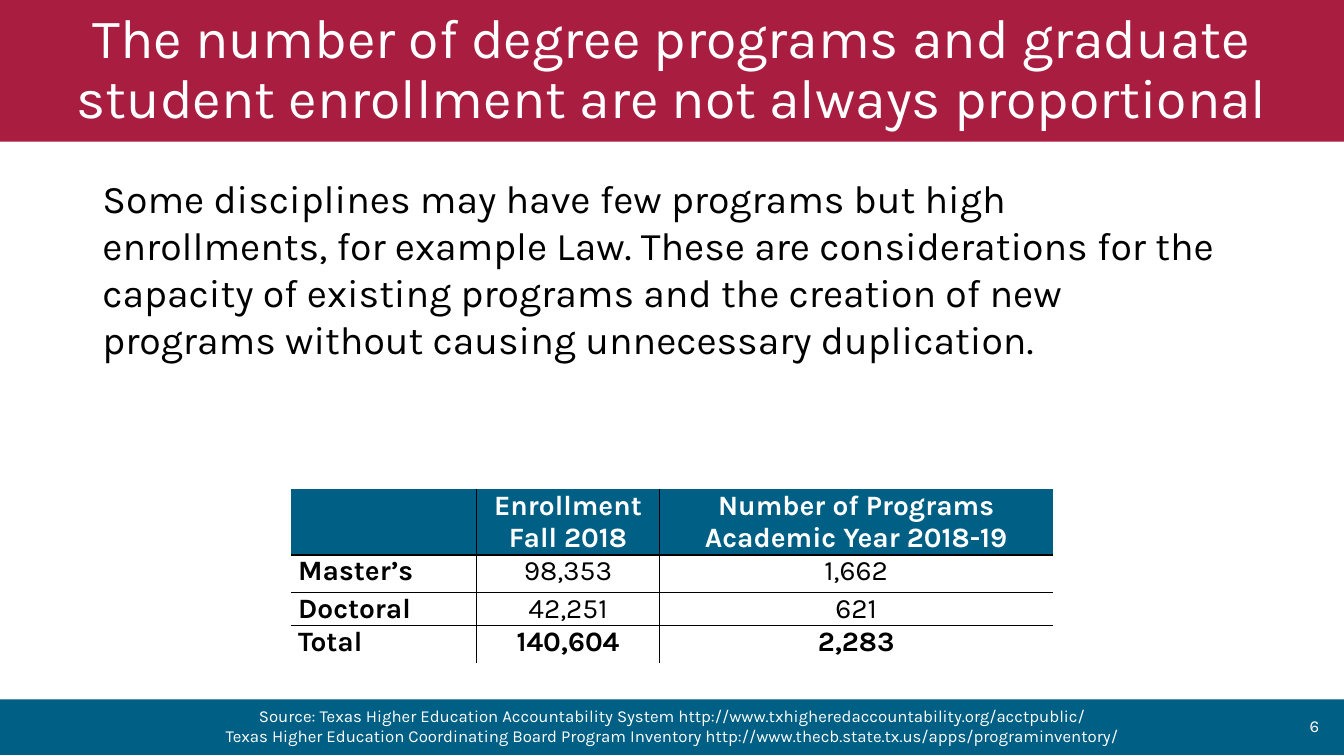
from dataclasses import dataclass

from lxml import etree
from pptx import Presentation
from pptx.dml.color import RGBColor
from pptx.enum.shapes import MSO_SHAPE
from pptx.enum.text import MSO_ANCHOR, MSO_AUTO_SIZE, PP_ALIGN
from pptx.oxml.ns import qn
from pptx.util import Pt

PX = 9525
RECT = MSO_SHAPE.RECTANGLE
TOP, MIDDLE = MSO_ANCHOR.TOP, MSO_ANCHOR.MIDDLE
LEFT, CENTER, RIGHT = PP_ALIGN.LEFT, PP_ALIGN.CENTER, PP_ALIGN.RIGHT
NO_FIT = MSO_AUTO_SIZE.NONE


@dataclass(frozen=True)
class Theme:
    """Colours, font and type sizes of the slide."""
    font: str = "Karla"
    crimson: str = "A81D40"
    teal: str = "005F84"
    white: str = "FFFFFF"
    black: str = "000000"
    title: float = 39.6
    body: int = 28
    table: int = 20
    small: int = 12


THEME = Theme()
TITLE = "The number of degree programs and graduate student enrollment are not always proportional"
BODY = ("Some disciplines may have few programs but high enrollments, for example Law. "
        "These are considerations for the capacity of existing programs and the creation "
        "of new programs without causing unnecessary duplication.")
SOURCES = [
    "Source: Texas Higher Education Accountability System "
    "http://www.txhigheredaccountability.org/acctpublic/",
    "Texas Higher Education Coordinating Board Program Inventory "
    "http://www.thecb.state.tx.us/apps/programinventory/",
]
PAGE = "6"
ROWS = [
    ["", "Enrollment\nFall 2018", "Number of Programs Academic Year 2018-19"],
    ["Master’s", "98,353", "1,662"],
    ["Doctoral", "42,251", "621"],
    ["Total", "140,604", "2,283"],
]
COL_WIDTHS = [177, 174, 375]
ROW_HEIGHTS = [62, 36, 31, 36]


def emu(box):
    """Turn pixel lengths into EMU."""
    return [v * PX for v in box]


def place(s, box):
    """Move a shape to a pixel box."""
    for name, value in zip(("left", "top", "width", "height"), emu(box)):
        setattr(s, name, value)


def write(tf, lines, size, color, align=LEFT, bold=False, **paragraph):
    """Write one formatted paragraph for each line."""
    layout = {"alignment": align, "space_before": Pt(0), **paragraph}
    style = {"name": THEME.font, "size": Pt(size), "bold": bold}
    for i, line in enumerate(lines):
        p = tf.add_paragraph() if i else tf.paragraphs[0]
        for name, value in layout.items():
            setattr(p, name, value)
        r = p.add_run()
        r.text = line
        for name, value in style.items():
            setattr(r.font, name, value)
        r.font.color.rgb = RGBColor.from_string(color)


def set_frame(tf, anchor):
    """Wrap text at a fixed box size with the given anchor."""
    frame = {"word_wrap": True, "auto_size": NO_FIT, "vertical_anchor": anchor}
    for name, value in frame.items():
        setattr(tf, name, value)


def add_title(slide, box):
    """Fill the title placeholder as a crimson band."""
    s = slide.shapes.title
    place(s, box)
    s.fill.solid()
    s.fill.fore_color.rgb = RGBColor.from_string(THEME.crimson)
    set_frame(s.text_frame, MIDDLE)
    write(s.text_frame, [TITLE], THEME.title, THEME.white, CENTER, line_spacing=0.9)


def add_body(slide, box):
    """Fill the body placeholder with an unbulleted paragraph."""
    s = slide.placeholders[1]
    place(s, box)
    tf = s.text_frame
    set_frame(tf, TOP)
    pPr = tf.paragraphs[0]._p.get_or_add_pPr()
    pPr.set("marL", "0")
    pPr.set("indent", "0")
    etree.SubElement(pPr, qn("a:buNone"))
    write(tf, [BODY], THEME.body, THEME.black, space_after=Pt(6))


def set_borders(cell, sides):
    """Draw a black rule on each side flagged true and none on the others."""
    tcPr = cell._tc.get_or_add_tcPr()
    for i, (side, shown) in enumerate(sides.items()):
        ln = etree.Element(qn(f"a:ln{side}"), w=str(Pt(1)))
        if shown:
            fill = etree.SubElement(ln, qn("a:solidFill"))
            etree.SubElement(fill, qn("a:srgbClr"), val=THEME.black)
        else:
            etree.SubElement(ln, qn("a:noFill"))
        tcPr.insert(i, ln)


def format_cell(cell, text, row, col):
    """Write one cell, styled by its row and column."""
    header = row == 0
    last_row, last_col = len(ROWS) - 1, len(COL_WIDTHS) - 1
    layout = {"margin_left": 7 * PX, "margin_right": 7 * PX, "margin_top": 0,
              "margin_bottom": 0, "vertical_anchor": MIDDLE if header else TOP}
    for name, value in layout.items():
        setattr(cell, name, value)
    if header:
        cell.fill.solid()
        cell.fill.fore_color.rgb = RGBColor.from_string(THEME.teal)
    else:
        cell.fill.background()
    write(cell.text_frame, text.split("\n"), THEME.table,
          THEME.white if header else THEME.black,
          CENTER if col else LEFT, row in (0, last_row) or col == 0)
    set_borders(cell, {"L": col > 0, "R": col < last_col,
                       "T": row > 0, "B": row < last_row})


def add_enrollment_table(slide, left, top):
    """Add the table of enrollment and programs by degree level."""
    box = emu((left, top, sum(COL_WIDTHS), sum(ROW_HEIGHTS)))
    table = slide.shapes.add_table(len(ROWS), len(COL_WIDTHS), *box).table
    table.horz_banding = False
    for column, width in zip(table.columns, COL_WIDTHS):
        column.width = width * PX
    for row, height in zip(table.rows, ROW_HEIGHTS):
        row.height = height * PX
    for i, texts in enumerate(ROWS):
        for j, text in enumerate(texts):
            format_cell(table.cell(i, j), text, i, j)


def add_footer(slide, box):
    """Add the teal band with the sources and the page number."""
    x, y, w, h = box
    s = slide.shapes.add_shape(RECT, *emu(box))
    s.shadow.inherit = False
    s.fill.solid()
    s.fill.fore_color.rgb = RGBColor.from_string(THEME.teal)
    s.line.fill.background()
    notes = [(SOURCES, x + 201, 879, CENTER), ([PAGE], x + w - 302, 288, RIGHT)]
    for lines, left, width, align in notes:
        tf = slide.shapes.add_textbox(*emu((left, y + 6, width, 39))).text_frame
        set_frame(tf, MIDDLE)
        write(tf, lines, THEME.small, THEME.white, align)


def main():
    """Build and save the slide."""
    prs = Presentation()
    prs.slide_width, prs.slide_height = emu((1280, 720))
    slide = prs.slides.add_slide(prs.slide_layouts[1])
    add_title(slide, (0, 0, 1280, 135))
    add_body(slide, (88, 161, 1081, 473))
    add_enrollment_table(slide, 277, 466)
    add_footer(slide, (0, 666, 1280, 53))
    prs.save("out.pptx")


if __name__ == "__main__":
    main()
